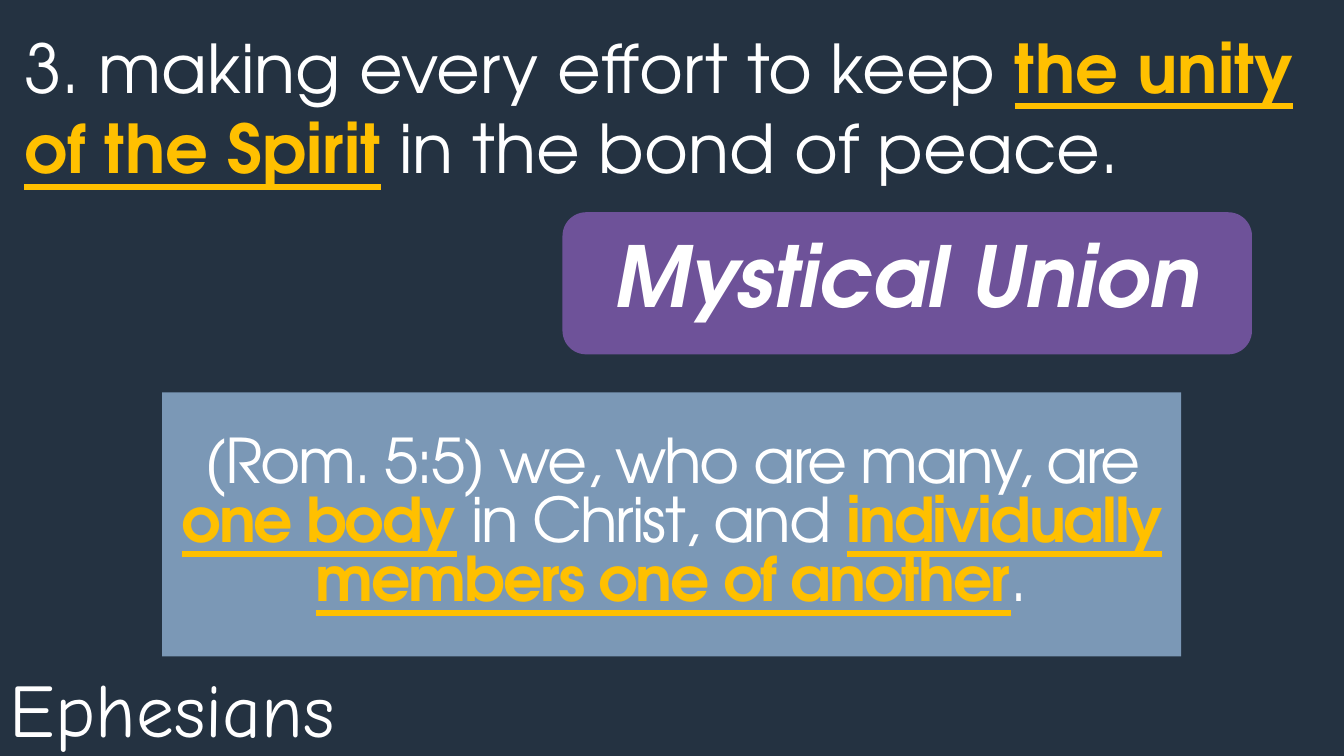
from pptx import Presentation
from pptx.dml.color import RGBColor
from pptx.enum.shapes import MSO_SHAPE as Shape
from pptx.enum.text import MSO_ANCHOR as Anchor, MSO_AUTO_SIZE as AutoSize, PP_ALIGN as Align
from pptx.util import Pt

COLORS = {
    "background": "243241",
    "text": "FFFFFF",
    "emphasis": "FFC000",
    "theme": "6E5299",
    "quote": "7B98B6",
}
VERSE_FONT = "TeX Gyre Adventor"
BOOK_FONT = "Comic Neue"

PLAIN = {"bold": False, "underline": False}
STRONG = {"bold": True, "underline": True}
STRONG_ITALIC = {"bold": True, "italic": True}


def color(name):
    return RGBColor.from_string(COLORS[name])


def apply_format(target, values):
    for attribute, value in values.items():
        setattr(target, attribute, value)


def write(frame, phrases, font, size, align=Align.LEFT, line_spacing=1.0,
          anchor=Anchor.TOP, auto_size=AutoSize.NONE, tracking=None):
    """Fill a frame with one paragraph of (wording, format) phrases."""
    apply_format(frame, {"word_wrap": True, "vertical_anchor": anchor, "auto_size": auto_size})
    paragraph = frame.paragraphs[0]
    apply_format(paragraph, {"alignment": align, "line_spacing": line_spacing})
    for wording, style in phrases:
        run = paragraph.add_run()
        run.text = wording
        apply_format(run.font, {"name": font, "size": Pt(size), **style})
        run.font.color.rgb = color("emphasis" if style is STRONG else "text")
        if tracking is not None:
            run.font._element.set("spc", str(round(tracking * 100)))


def add_verse_title(slide, box, phrases):
    title = slide.shapes.title
    apply_format(title, dict(zip(("left", "top", "width", "height"), map(Pt, box))))
    write(title.text_frame, phrases, VERSE_FONT, 48, auto_size=AutoSize.SHAPE_TO_FIT_TEXT)


def add_book_label(slide, box, book):
    label = slide.shapes.add_textbox(*map(Pt, box))
    write(label.text_frame, [(book, PLAIN)], BOOK_FONT, 54,
          auto_size=AutoSize.SHAPE_TO_FIT_TEXT)


def add_panel(slide, outline, box, fill, phrases, size, tracking=None):
    panel = slide.shapes.add_shape(outline, *map(Pt, box))
    panel.shadow.inherit = False
    panel.fill.solid()
    panel.fill.fore_color.rgb = color(fill)
    panel.line.fill.background()
    write(panel.text_frame, phrases, VERSE_FONT, size, align=Align.CENTER,
          line_spacing=0.8, anchor=Anchor.MIDDLE, tracking=tracking)


def main():
    deck = Presentation()
    apply_format(deck, {"slide_width": Pt(960), "slide_height": Pt(540)})
    slide = deck.slides.add_slide(deck.slide_layouts.get_by_name("Title Only"))
    slide.background.fill.solid()
    slide.background.fill.fore_color.rgb = color("background")

    add_book_label(slide, (0, 469.5, 280, 72.7), "Ephesians")
    add_verse_title(slide, (10, 15, 936, 124), [
        ("3. making every effort to keep ", PLAIN),
        ("the unity", STRONG),
        (" ", PLAIN),
        ("of the Spirit", STRONG),
        (" in the bond of peace.", PLAIN),
    ])
    add_panel(slide, Shape.ROUNDED_RECTANGLE, (401.8, 151.6, 492.5, 101.5), "theme",
              [("Mystical Union", STRONG_ITALIC)], 60)
    add_panel(slide, Shape.RECTANGLE, (115.8, 280.2, 728, 188.7), "quote", [
        ("(Rom. 5:5) we, who are many, are ", PLAIN),
        ("one body", STRONG),
        (" in Christ, and ", PLAIN),
        ("individually members one of another", STRONG),
        (".", PLAIN),
    ], 44, tracking=-1.5)
    deck.save("out.pptx")


if __name__ == "__main__":
    main()
